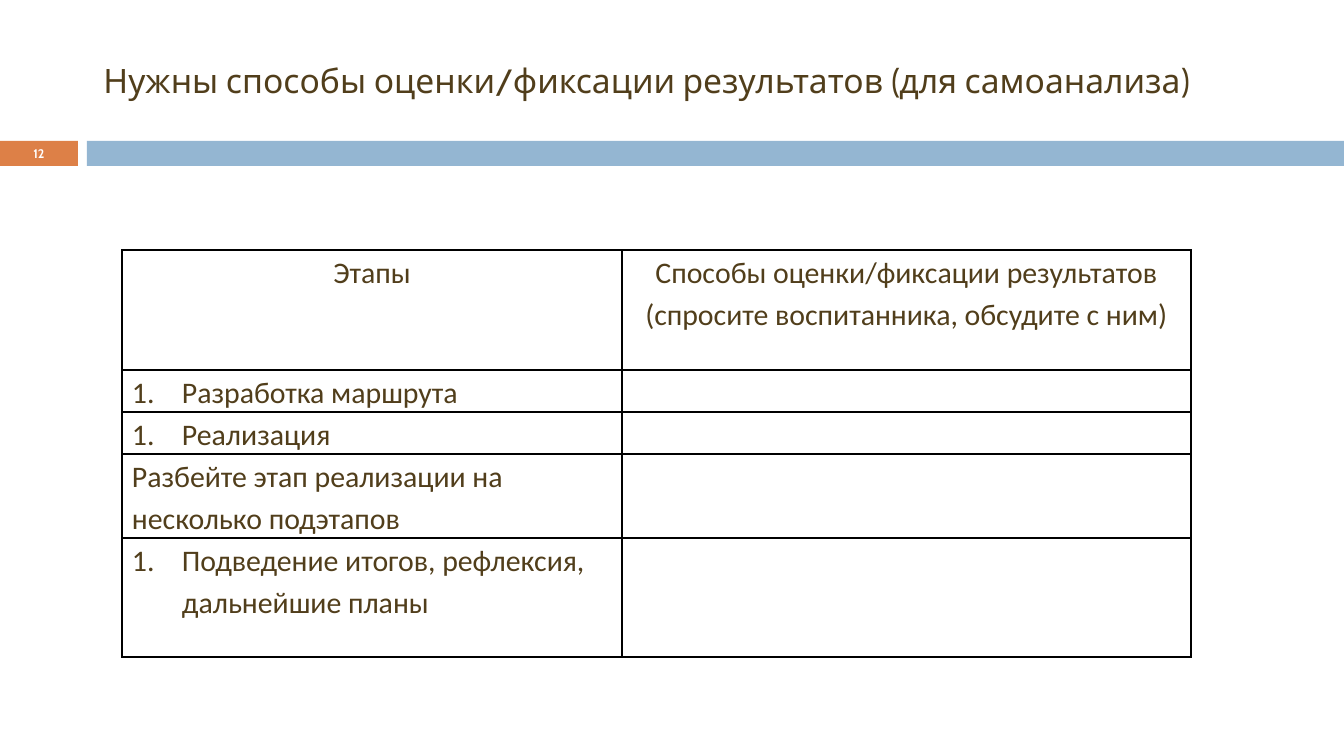
from lxml.etree import SubElement, fromstring
from pptx import Presentation
from pptx.dml.color import RGBColor
from pptx.enum.shapes import MSO_SHAPE as Shape
from pptx.enum.text import MSO_ANCHOR as Anchor, PP_ALIGN as Align
from pptx.oxml.ns import nsdecls, qn
from pptx.util import Pt

SCALE = 914400 / 134.4
HEADING_FONT, BODY_FONT = "Cabin", "Calibri"
BROWN, ORANGE, BLUE, WHITE, BLACK = "513E1B", "DD8047", "94B6D2", "FFFFFF", "000000"
COLUMNS = [500, 569]
ROWS = [
    (120, "Этапы", "Способы оценки/фиксации результатов (спросите воспитанника, обсудите с ним)"),
    (42, "Разработка маршрута", ""),
    (42, "Реализация", ""),
    (84, "Разбейте этап реализации на несколько подэтапов", ""),
    (119, "Подведение итогов, рефлексия, дальнейшие планы", ""),
]
NUMBERED_ROWS = {1, 2, 4}


def px(value):
    return round(value * SCALE)


def color(value):
    return RGBColor.from_string(value)


class SlideBuilder:
    """Holds the style and the current slide, and adds each kind of element."""

    def __init__(self, presentation):
        self.slide = presentation.slides.add_slide(presentation.slide_layouts[5])
        self.slide.background.fill.solid()
        self.slide.background.fill.fore_color.rgb = color(WHITE)

    def fill_text(self, frame, text, font, size, fill, align=Align.LEFT, bold=False):
        frame.text = text
        frame.word_wrap = True
        paragraph = frame.paragraphs[0]
        paragraph.alignment = align
        for run in paragraph.runs:
            run.font.name = font
            run.font.size = Pt(size)
            run.font.bold = bold
            run.font.color.rgb = color(fill)
        return paragraph

    def bar(self, left, top, width, height, fill):
        shape = self.slide.shapes.add_shape(Shape.RECTANGLE, *map(px, (left, top, width, height)))
        shape.shadow.inherit = False
        shape.fill.solid()
        shape.fill.fore_color.rgb = color(fill)
        shape.line.fill.background()

    def title(self, text, left, top, width, height):
        title = self.slide.shapes.title
        title.left, title.top, title.width, title.height = map(px, (left, top, width, height))
        title.text_frame.vertical_anchor = Anchor.MIDDLE
        self.fill_text(title.text_frame, text, HEADING_FONT, 18, BROWN)

    def page_number(self, text, left, top, width, height):
        box = self.slide.shapes.add_textbox(*map(px, (left, top, width, height)))
        frame = box.text_frame
        frame.vertical_anchor = Anchor.MIDDLE
        frame.margin_top = frame.margin_bottom = 0
        self.fill_text(frame, text, HEADING_FONT, 6.7, WHITE, Align.CENTER, True)

    def number(self, paragraph):
        properties = paragraph._p.get_or_add_pPr()
        properties.set("marL", str(px(50)))
        properties.set("indent", str(px(-50)))
        SubElement(properties, qn("a:buFont"), typeface="+mj-lt")
        SubElement(properties, qn("a:buAutoNum"), type="arabicPeriod")

    def border(self, cell):
        properties = cell._tc.get_or_add_tcPr()
        for index, side in enumerate(("lnL", "lnR", "lnT", "lnB")):
            line = fromstring(
                f'<a:{side} {nsdecls("a")} w="{Pt(1)}"><a:solidFill>'
                f'<a:srgbClr val="{BLACK}"/></a:solidFill></a:{side}>'
            )
            properties.insert(index, line)

    def cell(self, cell, text, align, numbered):
        cell.fill.background()
        cell.margin_left = cell.margin_right = px(10)
        cell.margin_top = cell.margin_bottom = 0
        paragraph = self.fill_text(cell.text_frame, text, BODY_FONT, 16, BROWN, align)
        if text:
            paragraph.line_spacing = 1.15
        if numbered:
            self.number(paragraph)
        self.border(cell)

    def table(self, left, top, columns, rows):
        heights = [row[0] for row in rows]
        size = map(px, (left, top, sum(columns), sum(heights)))
        table = self.slide.shapes.add_table(len(rows), len(columns), *size).table
        table.first_row = table.horz_banding = False
        for column, width in zip(table.columns, columns):
            column.width = px(width)
        for row_index, (height, *texts) in enumerate(rows):
            table.rows[row_index].height = px(height)
            align = Align.LEFT if row_index else Align.CENTER
            for column_index, text in enumerate(texts):
                numbered = column_index == 0 and row_index in NUMBERED_ROWS
                self.cell(table.cell(row_index, column_index), text, align, numbered)


def main():
    presentation = Presentation()
    presentation.slide_width, presentation.slide_height = px(1344), px(756)
    builder = SlideBuilder(presentation)
    builder.bar(0, 141, 78, 25, ORANGE)
    builder.bar(87, 141, 1257, 25, BLUE)
    builder.title("Нужны способы оценки/фиксации результатов (для самоанализа)", 90, 26, 1199, 109)
    builder.page_number("12", 0, 140, 78, 27)
    builder.table(122, 250, COLUMNS, ROWS)
    presentation.save("out.pptx")


if __name__ == "__main__":
    main()
